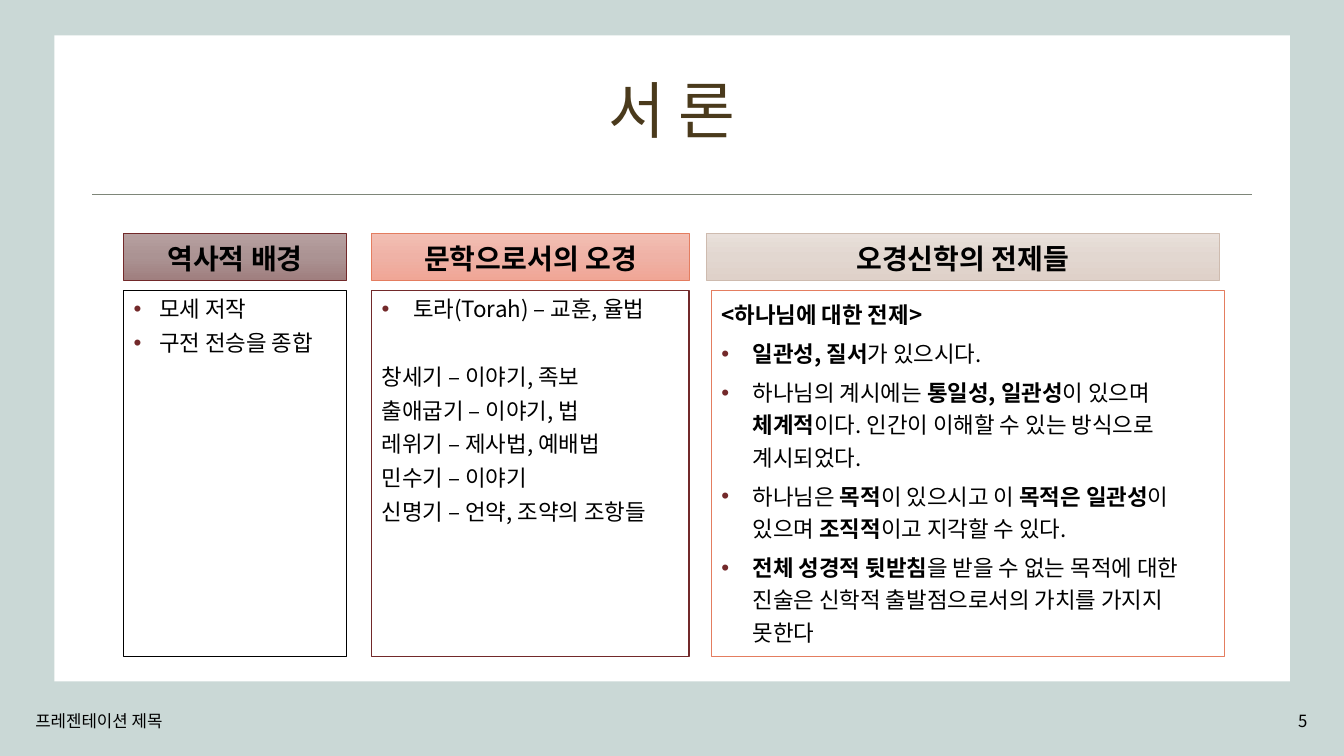
from copy import deepcopy

from lxml.etree import SubElement
from pptx import Presentation
from pptx.dml.color import RGBColor
from pptx.enum.shapes import MSO_CONNECTOR, MSO_SHAPE
from pptx.enum.text import MSO_ANCHOR, PP_ALIGN
from pptx.oxml.ns import qn
from pptx.util import Cm, Pt

FONT = "Noto Sans CJK KR"
COLORS = {
    "background": "CAD8D6", "white": "FFFFFF", "black": "000000",
    "rule": "7E8679", "title": "4A3A1C", "bullet": "73292A",
    "wine": "72292A", "coral": "E47D60", "sand": "CEBBAF",
}

# Content: ** marks bold text, a leading "• " marks a bullet
TITLE = "서 론"
FOOTER = "프레젠테이션 제목"
PAGE_NUMBER = "5"
COLUMNS = [
    {"heading": "역사적 배경", "left": 3.12, "body_left": 3.12, "width": 5.61,
     "gradient": ["B7A0A0", "AB9393", "A07F7F"],
     "heading_line": "wine", "body_line": "black",
     "indent": 0.64, "spacing": 1.0, "gaps": {},
     "body": ["• 모세 저작", "• 구전 전승을 종합"]},
    {"heading": "문학으로서의 오경", "left": 9.37, "body_left": 9.37, "width": 8.0,
     "gradient": ["F2BFB4", "EFB2A6", "F0A696"],
     "heading_line": "coral", "body_line": "wine",
     "indent": 0.79, "spacing": 1.0, "gaps": {1: 29},
     "body": ["• 토라(Torah) – 교훈, 율법",
              "창세기 – 이야기, 족보",
              "출애굽기 – 이야기, 법",
              "레위기 – 제사법, 예배법",
              "민수기 – 이야기",
              "신명기 – 언약, 조약의 조항들"]},
    {"heading": "오경신학의 전제들", "left": 17.8, "body_left": 17.93, "width": 12.93,
     "gradient": ["E9E0DB", "E2D7D0", "DFD1C9"],
     "heading_line": "sand", "body_line": "coral",
     "indent": 0.79, "spacing": 1.2, "gaps": {},
     "body": ["**<하나님에 대한 전제>**",
              "• **일관성, 질서**가 있으시다.",
              "• 하나님의 계시에는 **통일성, 일관성**이 있으며 **체계적**이다. "
              "인간이 이해할 수 있는 방식으로 계시되었다.",
              "• 하나님은 **목적**이 있으시고 이 **목적은 일관성**이 있으며 "
              "**조직적**이고 지각할 수 있다.",
              "• **전체 성경적 뒷받침**을 받을 수 없는 목적에 대한 진술은 "
              "신학적 출발점으로서의 가치를 가지지 못한다"]},
]
HEADING_TOP, HEADING_HEIGHT = 5.87, 1.19
BODY_TOP, BODY_HEIGHT = 7.32, 9.22


def rgb(name):
    return RGBColor.from_string(COLORS[name])


def style_run(run, size, color="black", bold=False):
    run.font.name = FONT
    run.font.size = Pt(size)
    run.font.bold = bold
    run.font.color.rgb = rgb(color)
    SubElement(run.font._element, qn("a:ea"), typeface=FONT)


def add_bullet(paragraph, indent):
    properties = paragraph._p.get_or_add_pPr()
    properties.set("marL", str(Cm(indent)))
    properties.set("indent", str(-Cm(indent)))
    color = SubElement(properties, qn("a:buClr"))
    SubElement(color, qn("a:srgbClr"), val=COLORS["bullet"])
    SubElement(properties, qn("a:buFont"), typeface="Arial")
    SubElement(properties, qn("a:buChar"), char="•")


def add_panel(left, top, width, height, line=None, line_width=1):
    panel = slide.shapes.add_shape(
        MSO_SHAPE.RECTANGLE, Cm(left), Cm(top), Cm(width), Cm(height))
    panel.shadow.inherit = False
    panel.fill.solid()
    panel.fill.fore_color.rgb = rgb("white")
    if line:
        panel.line.color.rgb = rgb(line)
        panel.line.width = Pt(line_width)
    else:
        panel.line.fill.background()
    return panel


def fill_gradient(panel, shades):
    panel.fill.gradient()
    panel.fill.gradient_angle = 270
    first = panel.fill.gradient_stops[0]._gs
    first.addnext(deepcopy(first))
    for i, (stop, shade) in enumerate(zip(panel.fill.gradient_stops, shades)):
        stop.color.rgb = RGBColor.from_string(shade)
        stop.position = i / (len(shades) - 1)


def write_line(frame, text, size, align, anchor, color="black", bold=False):
    frame.word_wrap = True
    frame.vertical_anchor = anchor
    frame.text = text
    paragraph = frame.paragraphs[0]
    paragraph.alignment = align
    style_run(paragraph.runs[0], size, color, bold)
    return paragraph


def add_label(text, left, top, width, height, size, align, color="black"):
    label = slide.shapes.add_textbox(Cm(left), Cm(top), Cm(width), Cm(height))
    return write_line(label.text_frame, text, size, align, MSO_ANCHOR.MIDDLE, color)


def write_body(frame, column):
    frame.word_wrap = True
    frame.vertical_anchor = MSO_ANCHOR.TOP
    for i, line in enumerate(column["body"]):
        paragraph = frame.add_paragraph() if i else frame.paragraphs[0]
        paragraph.alignment = PP_ALIGN.LEFT
        paragraph.line_spacing = column["spacing"]
        paragraph.space_before = Pt(column["gaps"].get(i, 5) if i else 0)
        if line.startswith("• "):
            add_bullet(paragraph, column["indent"])
        for j, part in enumerate(line.removeprefix("• ").split("**")):
            if part:
                run = paragraph.add_run()
                run.text = part
                style_run(run, 16, bold=j % 2 == 1)


prs = Presentation()
prs.slide_width, prs.slide_height = Cm(33.87), Cm(19.05)
slide = prs.slides.add_slide(prs.slide_layouts[6])
slide.background.fill.solid()
slide.background.fill.fore_color.rgb = rgb("background")

# White page, title and rule
add_panel(1.37, 0.89, 31.14, 16.28)
rule = slide.shapes.add_connector(
    MSO_CONNECTOR.STRAIGHT, Cm(2.33), Cm(4.9), Cm(31.54), Cm(4.9))
rule.line.color.rgb = rgb("rule")
rule.line.width = Pt(1)
SubElement(rule._element.spPr, qn("a:effectLst"))
title = add_label(TITLE, 2.33, 1.02, 29.21, 3.68, 44, PP_ALIGN.CENTER, "title")
title.line_spacing = 0.9

# Three columns: heading bar above a framed body
for column in COLUMNS:
    heading = add_panel(column["left"], HEADING_TOP, column["width"], HEADING_HEIGHT,
                        column["heading_line"], 0.5)
    fill_gradient(heading, column["gradient"])
    caption = write_line(heading.text_frame, column["heading"], 20,
                         PP_ALIGN.CENTER, MSO_ANCHOR.BOTTOM, bold=True)
    caption.line_spacing = 0.9
    body = add_panel(column["body_left"], BODY_TOP, column["width"], BODY_HEIGHT,
                     column["body_line"])
    write_body(body.text_frame, column)

# Footer
add_label(FOOTER, 0.64, 17.65, 11.43, 1.02, 12, PP_ALIGN.LEFT)
add_label(PAGE_NUMBER, 25.58, 17.65, 7.62, 1.02, 12, PP_ALIGN.RIGHT)

prs.save("out.pptx")
